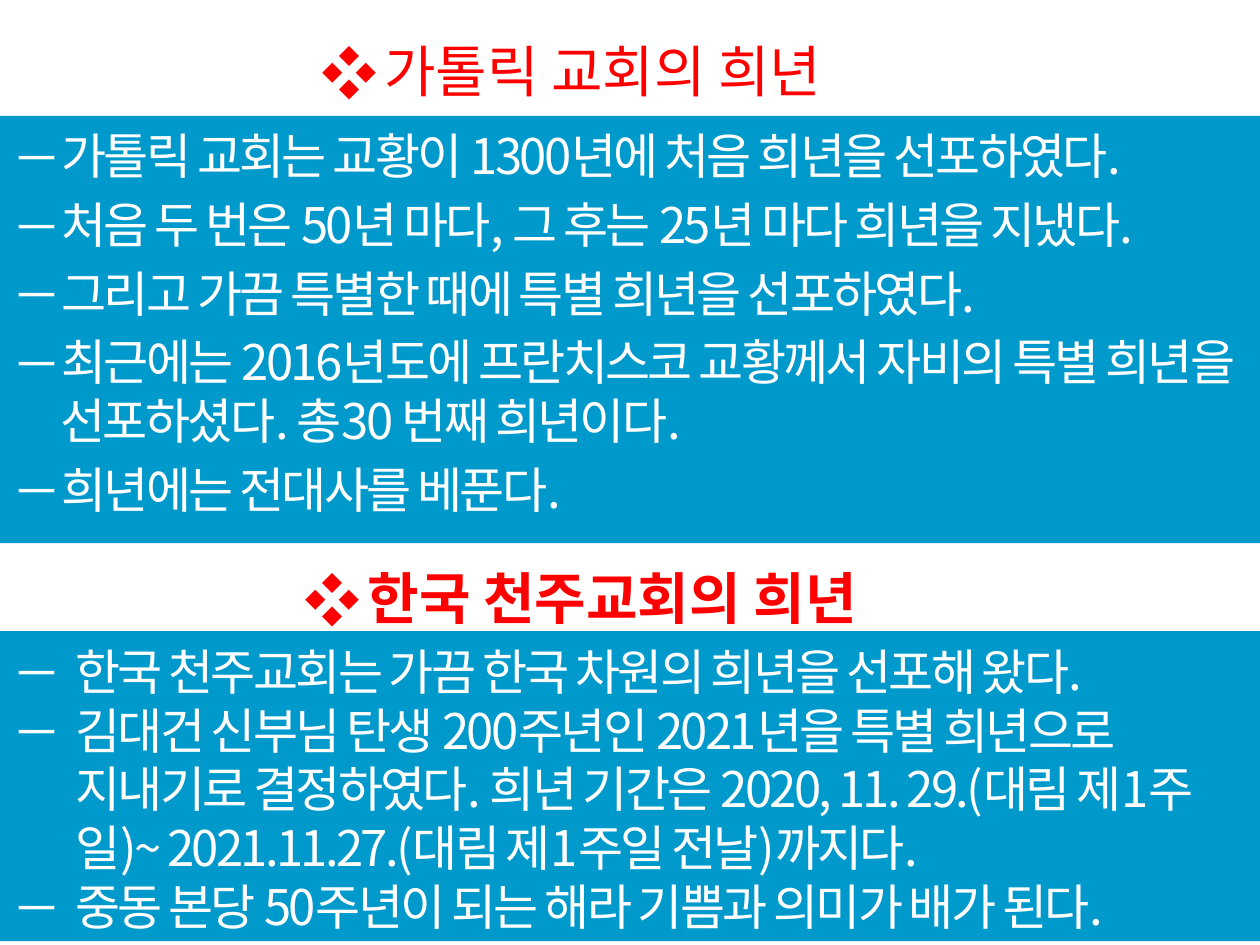
from pptx import Presentation, util as u
from pptx.dml.color import RGBColor
from pptx.enum import text as t
from pptx.oxml.ns import qn
from lxml import etree

FONT = "Noto Sans CJK KR"
RED = RGBColor(0xFF, 0x00, 0x00)
BLUE = RGBColor(0x00, 0x99, 0xCC)
WHITE = RGBColor(0xFF, 0xFF, 0xFF)

CATHOLIC_TITLE = "가톨릭 교회의 희년"
CATHOLIC_POINTS = [
    "가톨릭 교회는 교황이 1300년에 처음 희년을 선포하였다.",
    "처음 두 번은 50년 마다, 그 후는 25년 마다 희년을 지냈다.",
    "그리고 가끔 특별한 때에 특별 희년을 선포하였다.",
    "최근에는 2016년도에 프란치스코 교황께서 자비의 특별 희년을 선포하셨다. 총30 번째 희년이다.",
    "희년에는 전대사를 베푼다.",
]
KOREAN_TITLE = "한국 천주교회의 희년"
KOREAN_POINTS = [
    "한국 천주교회는 가끔 한국 차원의 희년을 선포해 왔다.",
    "김대건 신부님 탄생 200주년인 2021년을 특별 희년으로 지내기로 결정하였다. "
    "희년 기간은 2020, 11. 29.(대림 제1주일)~ 2021.11.27.(대림 제1주일 전날)까지다.",
    "중동 본당 50주년이 되는 해라 기쁨과 의미가 배가 된다.",
]


def place(part, left, top, width, height, fill=None):
    part.left, part.top = u.Inches(left), u.Inches(top)
    part.width, part.height = u.Inches(width), u.Inches(height)
    if fill is not None:
        part.fill.solid()
        part.fill.fore_color.rgb = fill


def write(part, lines, size=28, color=WHITE, bold=False, bullet="－", indent=0.5,
          gap=0, spacing=0, align=t.PP_ALIGN.LEFT, anchor=t.MSO_ANCHOR.TOP, inset=0.08):
    frame = part.text_frame
    frame.word_wrap = True
    frame.auto_size = t.MSO_AUTO_SIZE.NONE
    frame.vertical_anchor = anchor
    frame.margin_top = u.Inches(inset)
    for index, line in enumerate(lines):
        paragraph = frame.add_paragraph() if index else frame.paragraphs[0]
        props = paragraph._p.get_or_add_pPr()
        props.set("marL", str(u.Inches(indent)))
        props.set("indent", str(-u.Inches(indent)))
        etree.SubElement(props, qn("a:buFont")).set("typeface", FONT)
        etree.SubElement(props, qn("a:buChar")).set("char", bullet)
        paragraph.alignment = align
        paragraph.line_spacing = u.Pt(size * 1.2)
        paragraph.space_before = u.Pt(gap if index else 0)
        run = paragraph.add_run()
        run.text = line
        run.font.size, run.font.bold, run.font.name = u.Pt(size), bold, FONT
        run.font.color.rgb = color
        run_props = run._r.get_or_add_rPr()
        run_props.set("spc", str(round(spacing * 100)))
        etree.SubElement(run_props, qn("a:ea")).set("typeface", FONT)


deck = Presentation()
deck.slide_width, deck.slide_height = u.Inches(10), u.Inches(7.5)
slide = deck.slides.add_slide(deck.slide_layouts[1])
heading = dict(size=32, color=RED, bullet="❖", align=t.PP_ALIGN.CENTER)

catholic_title = slide.shapes.title
place(catholic_title, 2.09, 0.21, 4.89, 0.69)
write(catholic_title, [CATHOLIC_TITLE], anchor=t.MSO_ANCHOR.MIDDLE, inset=0.05, **heading)

catholic_points = slide.placeholders[1]
place(catholic_points, 0, 0.92, 10, 3.39, BLUE)
write(catholic_points, CATHOLIC_POINTS, indent=0.38, gap=5.6, spacing=-1.5)

korean_points = slide.shapes.add_textbox(0, 0, 0, 0)
place(korean_points, 0, 5.01, 10, 2.46, BLUE)
write(korean_points, KOREAN_POINTS, spacing=-1.5)

korean_title = slide.shapes.add_textbox(0, 0, 0, 0)
place(korean_title, 2.09, 4.38, 5.04, 0.55)
write(korean_title, [KOREAN_TITLE], bold=True, inset=0.09, **heading)

deck.save("out.pptx")
